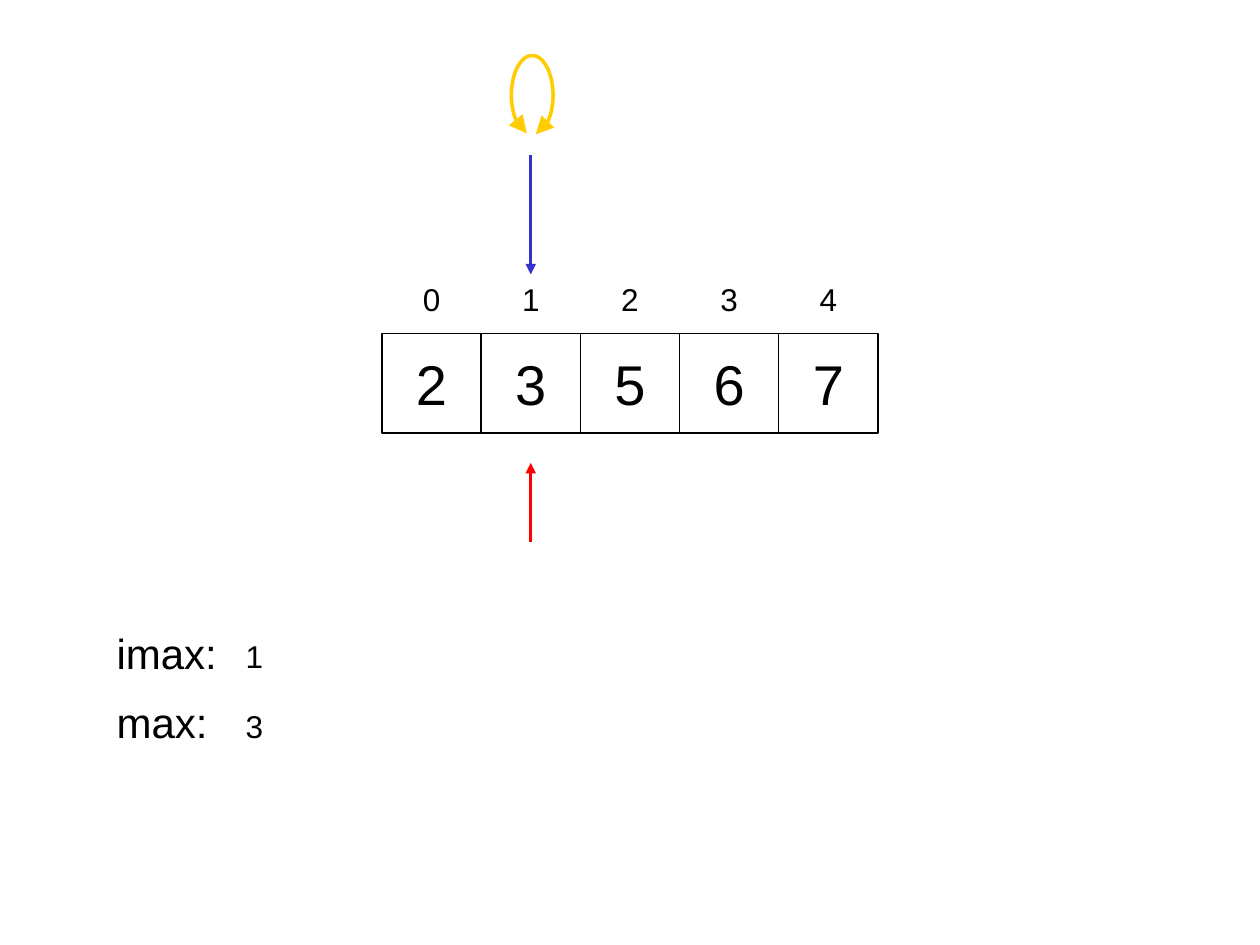
from dataclasses import dataclass
from math import cos, radians, sin

from lxml.etree import SubElement
from pptx import Presentation
from pptx.dml.color import RGBColor
from pptx.enum.shapes import MSO_CONNECTOR, MSO_SHAPE
from pptx.enum.text import MSO_ANCHOR, MSO_AUTO_SIZE, PP_ALIGN
from pptx.oxml.ns import qn
from pptx.util import Cm, Pt


@dataclass(frozen=True)
class Theme:
    font: str = "Arial"
    ink: str = "000000"
    current: str = "3333CC"
    maximum: str = "FF0000"
    compare: str = "FFCC00"
    value_size: int = 32
    name_size: int = 24
    label_size: int = 18
    border: float = 0.75
    stroke: float = 2


class ArraySlide:
    def __init__(self, slide, theme):
        self.slide = slide
        self.shapes = slide.shapes
        self.theme = theme

    def set_text(self, shape, text, size, align, frame_format):
        frame = shape.text_frame
        for name, value in frame_format.items():
            setattr(frame, name, value)
        paragraph = frame.paragraphs[0]
        paragraph.alignment = align
        run = paragraph.add_run()
        run.text = text
        for name, value in {"name": self.theme.font, "size": Pt(size)}.items():
            setattr(run.font, name, value)
        run.font.color.rgb = RGBColor.from_string(self.theme.ink)

    def set_line(self, shape, color, width, ends=(), end_size="med"):
        shape.line.color.rgb = RGBColor.from_string(color)
        shape.line.width = Pt(width)
        outline = shape._element.spPr.find(qn("a:ln"))
        for end in ends:
            SubElement(outline, qn(f"a:{end}"),
                       type="triangle", w=end_size, len=end_size)

    def cell(self, left, top, side, text):
        shape = self.shapes.add_shape(
            MSO_SHAPE.RECTANGLE, Cm(left), Cm(top), Cm(side), Cm(side))
        shape.shadow.inherit = False
        shape.fill.background()
        self.set_line(shape, self.theme.ink, self.theme.border)
        self.set_text(shape, text, self.theme.value_size, PP_ALIGN.CENTER,
                      {"word_wrap": False, "vertical_anchor": MSO_ANCHOR.MIDDLE})

    def text(self, left, top, width, height, text, size,
             align=PP_ALIGN.LEFT, auto_size=MSO_AUTO_SIZE.NONE):
        box = self.shapes.add_textbox(Cm(left), Cm(top), Cm(width), Cm(height))
        self.set_text(box, text, size, align,
                      {"word_wrap": True, "auto_size": auto_size})

    def arrow(self, x, start, end, color):
        line = self.shapes.add_connector(
            MSO_CONNECTOR.STRAIGHT, Cm(x), Cm(start), Cm(x), Cm(end))
        self.set_line(line, color, self.theme.stroke, ["tailEnd"])
        SubElement(line._element.spPr, qn("a:effectLst"))

    def loop(self, x, y, radius_x, radius_y, start, end):
        """Open ellipse between two angles, with an arrowhead at each end."""
        points = [(Cm(x + radius_x * cos(radians(angle))),
                   Cm(y + radius_y * sin(radians(angle))))
                  for angle in range(start, end + 1, 5)]
        builder = self.shapes.build_freeform(*points[0])
        builder.add_line_segments(points[1:], close=False)
        shape = builder.convert_to_shape()
        shape.shadow.inherit = False
        shape.fill.background()
        self.set_line(shape, self.theme.compare, self.theme.stroke,
                      ["headEnd", "tailEnd"], "lg")


def main():
    presentation = Presentation()
    presentation.slide_width, presentation.slide_height = Cm(25.4), Cm(19.05)
    theme = Theme()
    array = ArraySlide(
        presentation.slides.add_slide(presentation.slide_layouts[6]), theme)

    # Array cells with their indexes
    left, top, side = 7.7, 6.73, 2
    values = [2, 3, 5, 6, 7]
    for index, value in enumerate(values):
        x = left + index * side
        array.cell(x, top, side, str(value))
        array.text(x, 5.53, side, 1, str(index), theme.label_size,
                   PP_ALIGN.CENTER)

    # Pointers to the current element and to the maximum
    imax = 1
    center = left + (imax + 0.5) * side
    array.arrow(center, 3.13, 5.53, theme.current)
    array.arrow(center, 10.93, 9.33, theme.maximum)

    # Variables
    for row, (name, value) in enumerate(
            [("imax:", imax), ("max:", values[imax])]):
        y = 12.52 + row * 1.4
        array.text(2.1, y, 2.8, 1.27, name, theme.name_size,
                   auto_size=MSO_AUTO_SIZE.SHAPE_TO_FIT_TEXT)
        array.text(4.7, y + 0.2, 0.8, 1.02, str(value), theme.label_size,
                   auto_size=MSO_AUTO_SIZE.SHAPE_TO_FIT_TEXT)

    # Comparison of the element with itself
    array.loop(10.73, 1.92, 0.42, 0.8, 105, 440)

    presentation.save("out.pptx")


if __name__ == "__main__":
    main()
